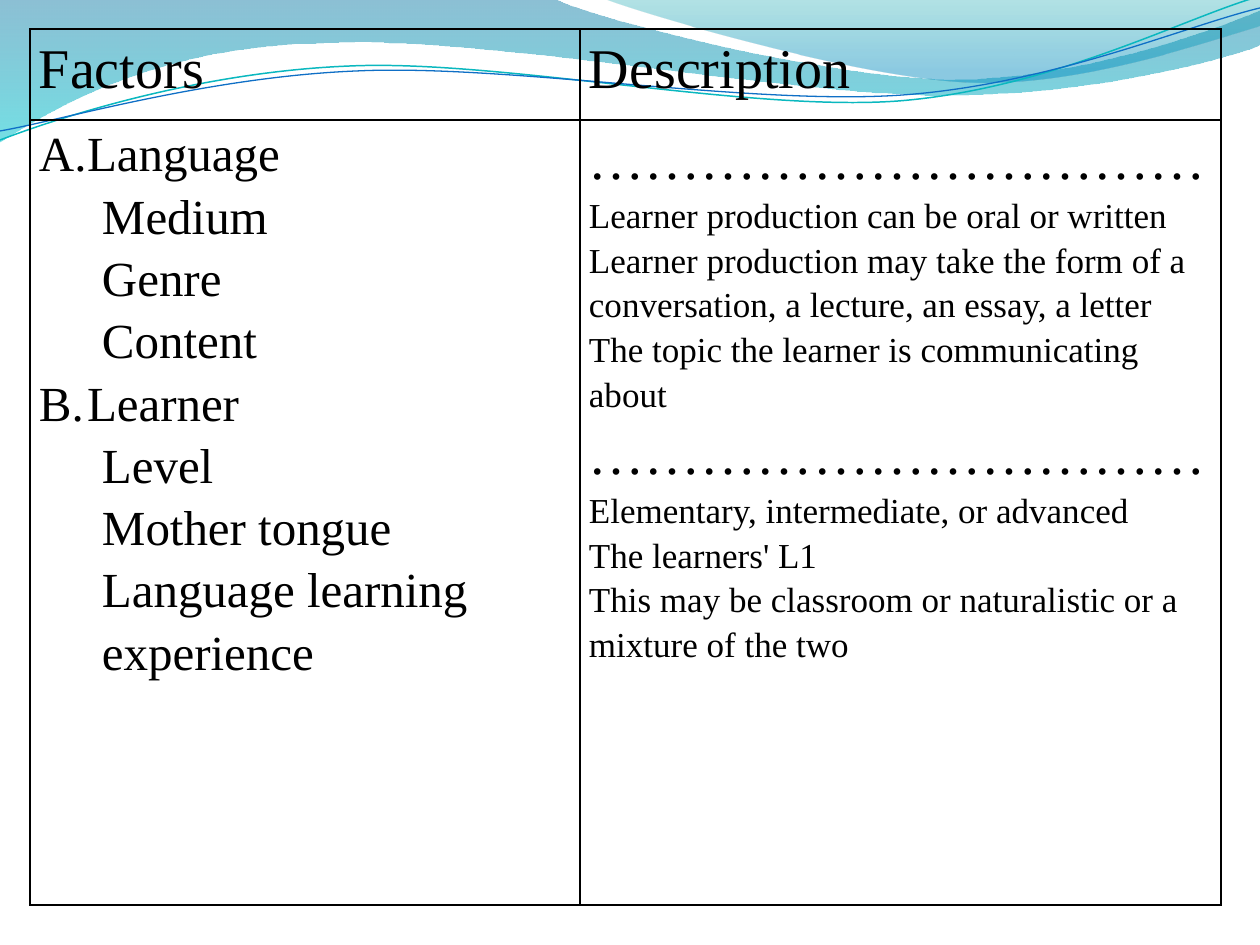
from lxml import etree
from pptx import Presentation
from pptx import util as u
from pptx.dml.color import RGBColor
from pptx.oxml import ns

PX = 9144000 / 1260
FONT = "Times New Roman"
BLACK = "000000"

# Outlines: a start point, then segments of one point (line) or three (Bézier curve)
WIDE_WAVE = [(0, 0), [(554, -1)],
             [(600, 21), (837, 79), (955, 79)], [(1075, 79), (1207, 33), (1260, 11)],
             [(1261, 45)], [(1239, 55), (1096, 96), (940, 95)],
             [(784, 95), (481, 35), (324, 43)], [(163, 45), (58, 105), (-1, 142)],
             [(0, 0)]]
RIGHT_WAVE = [(604, -1), [(641, 14), (859, 78), (969, 82)],
              [(1079, 87), (1211, 40), (1260, 26)], [(1260, 0)], [(604, -1)]]
TEAL_LINE = [(0, 140), [(60, 117), (199, 72), (349, 66)],
             [(498, 59), (747, 112), (898, 101)], [(1050, 89), (1182, 19), (1257, -3)]]
BLUE_LINE = [(0, 131), [(59, 121), (207, 77), (357, 71)],
             [(508, 64), (752, 106), (903, 95)], [(1053, 84), (1185, 26), (1260, 8)]]

# Table text: (text, size in points, list letter number or 0, left indent in px)
FACTORS = [("Language", 28, 1, 48), ("Medium", 28, 0, 63), ("Genre", 28, 0, 63),
           ("Content", 28, 0, 63), ("Learner", 28, 2, 48), ("Level", 28, 0, 63),
           ("Mother tongue", 28, 0, 63), ("Language learning experience", 28, 0, 63)]
DOTS = ("……………………………", 32, 0, 0)
DESCRIPTIONS = [
    DOTS,
    ("Learner production can be oral or written", 20, 0, 0),
    ("Learner production may take the form of a conversation, a lecture, an essay, a letter",
     20, 0, 0),
    ("The topic the learner is communicating about", 20, 0, 0),
    DOTS,
    ("Elementary, intermediate, or advanced", 20, 0, 0),
    ("The learners' L1", 20, 0, 0),
    ("This may be classroom or naturalistic or a mixture of the two", 20, 0, 0),
]
ROWS = [[[("Factors", 32, 0, 0)], [("Description", 32, 0, 0)]],
        [FACTORS, DESCRIPTIONS]]


def px(length):
    return u.Emu(round(length * PX))


def color(value):
    return RGBColor.from_string(value)


def add_element(parent, tag, **attributes):
    return etree.SubElement(parent, ns.qn(tag), attributes)


def add_outline(slide, outline, close):
    start, *segments = outline
    builder = slide.shapes.build_freeform(px(start[0]), px(start[1]))
    points = [(px(x), px(y)) for segment in segments for x, y in segment]
    builder.add_line_segments(points, close=close)
    shape = builder.convert_to_shape()
    shape.shadow.inherit = False
    # Turn each run of three points into one Bézier curve
    steps = iter(list(shape._element.spPr.iter(ns.qn("a:lnTo"))))
    for segment in segments:
        step = next(steps)
        if len(segment) == 3:
            step.addprevious(curve := etree.Element(ns.qn("a:cubicBezTo")))
            for line in (step, next(steps), next(steps)):
                curve.append(line[0])
                line.getparent().remove(line)
    return shape


def add_wave(slide, outline, stops):
    shape = add_outline(slide, outline, True)
    shape.line.fill.background()
    shape.fill.gradient()
    shape.fill.gradient_angle = 270
    for stop, (position, value, opacity) in zip(shape.fill.gradient_stops, stops):
        stop.position = position
        stop.color.rgb = color(value)
    # Opacity of each stop
    colors = shape._element.spPr.iter(ns.qn("a:srgbClr"))
    for element, (position, value, opacity) in zip(colors, stops):
        add_element(element, "a:alpha", val=str(opacity * 1000))


def add_wave_line(slide, outline, value, width):
    shape = add_outline(slide, outline, False)
    shape.fill.background()
    shape.line.color.rgb = color(value)
    shape.line.width = u.Pt(width)


def write_paragraph(paragraph, content, size, number, indent):
    paragraph.text = content
    paragraph.line_spacing = 1.15
    properties = paragraph._p.get_or_add_pPr()
    properties.set("marL", str(px(indent)))
    properties.set("indent", str(px(-indent if number else 0)))
    if number:
        add_element(properties, "a:buFont", typeface=FONT)
        add_element(properties, "a:buAutoNum", type="alphaUcPeriod", startAt=str(number))
    font = paragraph.runs[0].font
    font.name, font.size, font.bold = FONT, u.Pt(size), False
    font.color.rgb = color(BLACK)


def format_cell(cell):
    cell.margin_left = cell.margin_right = px(9)
    cell.margin_top = cell.margin_bottom = 0
    properties = cell._tc.get_or_add_tcPr()
    for side in ("L", "R", "T", "B"):
        border = add_element(properties, f"a:ln{side}", w=str(u.Pt(1)))
        fill = add_element(border, "a:solidFill")
        add_element(fill, "a:srgbClr", val=BLACK)
    cell.fill.background()


def add_factor_table(slide, left, top, widths, heights):
    frame = slide.shapes.add_table(len(heights), len(widths), px(left), px(top),
                                   px(sum(widths)), px(sum(heights)))
    table = frame.table
    table.first_row = table.horz_banding = False
    for column, width in zip(table.columns, widths):
        column.width = px(width)
    for row, height, contents in zip(table.rows, heights, ROWS):
        row.height = px(height)
        for cell, lines in zip(row.cells, contents):
            format_cell(cell)
            cell.text_frame.text = "\n".join(line[0] for line in lines)
            for paragraph, line in zip(cell.text_frame.paragraphs, lines):
                write_paragraph(paragraph, *line)


def main():
    presentation = Presentation()
    presentation.slide_width, presentation.slide_height = px(1260), px(945)
    slide = presentation.slides.add_slide(presentation.slide_layouts[6])

    # Waves behind the header
    add_wave(slide, WIDE_WAVE, [(0, "0074A1", 45), (1, "00C6CF", 55)])
    add_wave(slide, RIGHT_WAVE, [(0, "00A1A9", 30), (0.8, "008BBF", 45)])
    add_wave_line(slide, TEAL_LINE, "0AB8BF", 0.85)
    add_wave_line(slide, BLUE_LINE, "0F6FC6", 0.75)

    # Factors and their descriptions
    add_factor_table(slide, 30, 29, widths=(550, 641), heights=(91, 785))
    presentation.save("out.pptx")


if __name__ == "__main__":
    main()
